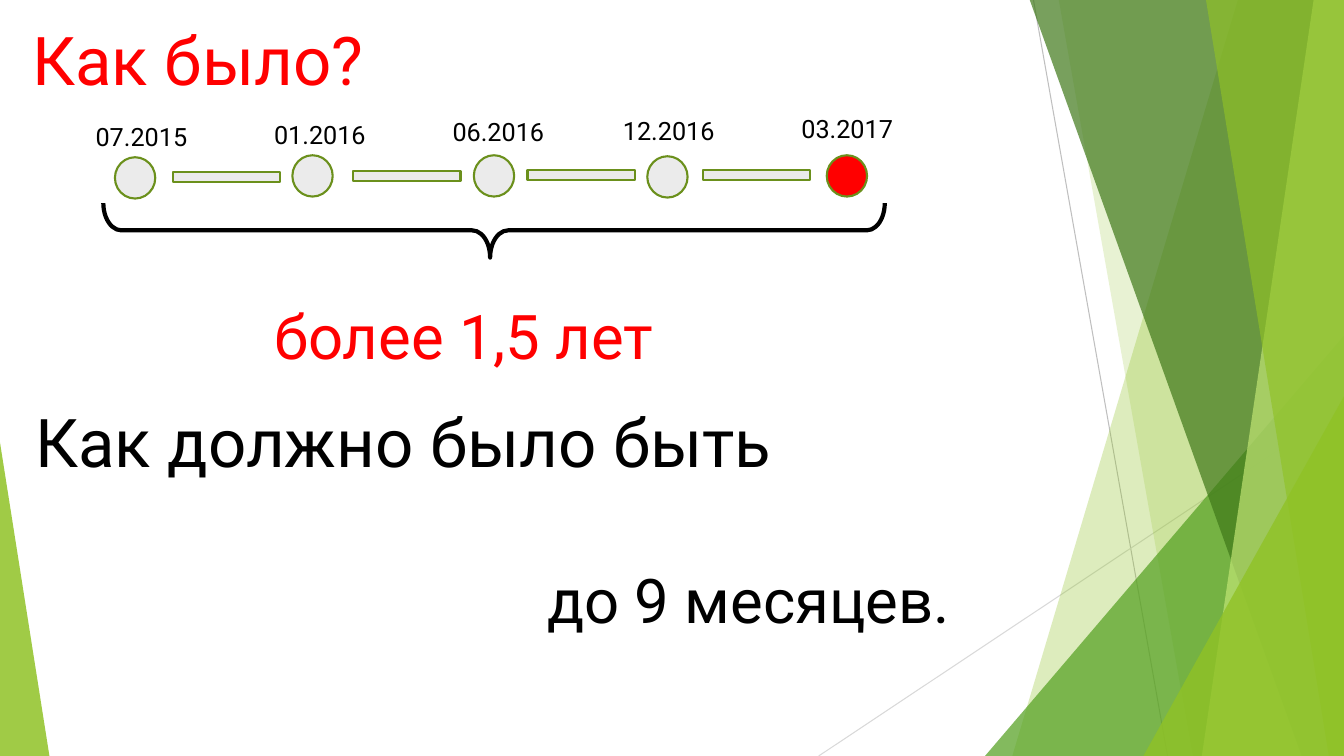
from dataclasses import dataclass
from typing import Optional

from lxml.etree import SubElement
from pptx import Presentation
from pptx.dml.color import RGBColor
from pptx.enum.shapes import MSO_CONNECTOR, MSO_SHAPE
from pptx.enum.text import MSO_ANCHOR, MSO_AUTO_SIZE, PP_ALIGN
from pptx.oxml.ns import qn
from pptx.util import Inches, Pt

WIDTH, HEIGHT = 13.33, 7.5
FACET_TOP = -0.01

BLACK = RGBColor(0x00, 0x00, 0x00)
RED = RGBColor(0xFF, 0x00, 0x00)
PALE = RGBColor(0xEB, 0xEB, 0xEB)
OLIVE = RGBColor(0x6B, 0x90, 0x1C)
LIME = RGBColor(0x90, 0xC2, 0x26)
LIGHT_LIME = RGBColor(0xC0, 0xE4, 0x74)
GREEN = RGBColor(0x54, 0xA0, 0x21)
DARK_GREEN = RGBColor(0x3F, 0x78, 0x19)
GREY = RGBColor(0xBF, 0xBF, 0xBF)
LIGHT_GREY = RGBColor(0xD9, 0xD9, 0xD9)


@dataclass
class Ray:
    start: tuple[float, float]
    end: tuple[float, float]
    color: RGBColor


@dataclass
class Facet:
    """A band from its slanted left edge to the right side of the slide."""
    top_left: float
    bottom_left: float
    color: RGBColor
    opacity: int


@dataclass
class Corner:
    """A right triangle standing on the bottom of the slide."""
    left: float
    top: float
    width: float
    apex: float
    color: RGBColor
    opacity: int


@dataclass
class Milestone:
    date: str
    label: tuple[float, float]
    dot: tuple[float, float]
    bar: Optional[tuple[float, float]] = None
    color: RGBColor = PALE


@dataclass
class Caption:
    text: str
    box: tuple[float, float, float, float]
    size: int
    color: RGBColor = BLACK
    grows: bool = True


RAYS = [
    Ray((10.25, 0), (11.58, HEIGHT), GREY),
    Ray((WIDTH, 4.03), (8.12, HEIGHT), LIGHT_GREY),
]
BACKDROP = [
    Facet(12.28, 10.04, LIME, 30),
    Facet(10.5, 11.83, LIME, 20),
    Corner(9.77, 3.33, 3.56, 1, GREEN, 72),
    Facet(10.21, 12.91, DARK_GREEN, 70),
    Facet(13.03, 11.92, LIGHT_LIME, 70),
    Facet(11.96, 13.18, LIME, 65),
    Corner(11.34, 3.93, 1.99, 1, LIME, 80),
    Corner(0, 4.39, 0.49, 0, LIME, 85),
]
MILESTONES = [
    Milestone("07.2015", (0.85, 1.15), (1.14, 1.56), (1.52, 1.55)),
    Milestone("01.2016", (2.62, 1.13), (2.9, 1.54), (3.31, 1.54)),
    Milestone("06.2016", (4.39, 1.1), (4.7, 1.54), (5.04, 1.53)),
    Milestone("12.2016", (6.08, 1.09), (6.42, 1.55), (6.78, 1.53)),
    Milestone("03.2017", (7.85, 1.08), (8.2, 1.54), color=RED),
]
TITLE = Caption("Как было?", (0.22, 0.13, 9.75, 1.44), 48, RED, False)
CAPTIONS = [
    Caption("более 1,5 лет", (2.62, 2.91, 4.63, 0.84), 44, RED),
    Caption("Как должно было быть", (0.25, 3.92, 9.75, 1.44), 48, grows=False),
    Caption("до 9 месяцев.", (5.33, 5.53, 4.64, 0.84), 44),
]


def set_all(target, values: dict) -> None:
    for name, value in values.items():
        setattr(target, name, value)


def draw_ray(page, ray: Ray) -> None:
    points = [Inches(value) for value in (*ray.start, *ray.end)]
    line = page.shapes.add_connector(MSO_CONNECTOR.STRAIGHT, *points)
    line.line.color.rgb = ray.color
    line.line.width = Pt(0.75)
    SubElement(line.element.spPr, qn("a:effectLst"))


def paint(shape, color: RGBColor, opacity: int) -> None:
    """Give a backdrop shape a translucent fill and no outline."""
    shape.shadow.inherit = False
    shape.fill.solid()
    shape.fill.fore_color.rgb = color
    shape.line.fill.background()
    tint = shape.element.spPr.find(".//" + qn("a:srgbClr"))
    SubElement(tint, qn("a:alpha"), val=str(opacity * 1000))


def draw_facet(page, facet: Facet) -> None:
    start, *others = [
        (Inches(x), Inches(y)) for x, y in (
            (facet.top_left, FACET_TOP), (WIDTH, FACET_TOP),
            (WIDTH, HEIGHT), (facet.bottom_left, HEIGHT))
    ]
    builder = page.shapes.build_freeform(*start)
    builder.add_line_segments(others, close=True)
    paint(builder.convert_to_shape(), facet.color, facet.opacity)


def draw_corner(page, corner: Corner) -> None:
    box = (corner.left, corner.top, corner.width, HEIGHT - corner.top)
    triangle = page.shapes.add_shape(MSO_SHAPE.ISOSCELES_TRIANGLE, *map(Inches, box))
    triangle.adjustments[0] = corner.apex
    paint(triangle, corner.color, corner.opacity)


def draw_marker(page, kind: MSO_SHAPE, place: tuple[float, float],
                size: tuple[float, float], color: RGBColor) -> None:
    marker = page.shapes.add_shape(kind, *map(Inches, (*place, *size)))
    marker.shadow.inherit = False
    marker.fill.solid()
    marker.fill.fore_color.rgb = color
    marker.line.color.rgb = OLIVE
    marker.line.width = Pt(1.5)


def write(shape, caption: Caption) -> None:
    left, top, width, height = map(Inches, caption.box)
    set_all(shape, {"left": left, "top": top, "width": width, "height": height})
    fit = MSO_AUTO_SIZE.SHAPE_TO_FIT_TEXT if caption.grows else MSO_AUTO_SIZE.NONE
    set_all(shape.text_frame, {
        "word_wrap": True, "auto_size": fit, "vertical_anchor": MSO_ANCHOR.TOP})
    para = shape.text_frame.paragraphs[0]
    para.alignment = PP_ALIGN.LEFT
    span = para.add_run()
    span.text = caption.text
    set_all(span.font, {"name": "Roboto", "size": Pt(caption.size)})
    span.font.color.rgb = caption.color


def add_caption(page, caption: Caption) -> None:
    write(page.shapes.add_textbox(*map(Inches, caption.box)), caption)


def draw_milestone(page, stone: Milestone) -> None:
    draw_marker(page, MSO_SHAPE.FLOWCHART_CONNECTOR, stone.dot, (0.4, 0.41), stone.color)
    add_caption(page, Caption(stone.date, (*stone.label, 1.14, 0.4), 18))
    if stone.bar:
        draw_marker(page, MSO_SHAPE.MATH_MINUS, stone.bar, (1.45, 0.42), PALE)


def draw_brace(page) -> None:
    box = map(Inches, (4.63, -1.59, 0.54, 7.75))
    brace = page.shapes.add_shape(MSO_SHAPE.LEFT_BRACE, *box)
    brace.rotation = 270
    brace.adjustments[0], brace.adjustments[1] = 0.33, 0.495
    brace.shadow.inherit = False
    brace.fill.background()
    brace.line.color.rgb = BLACK
    brace.line.width = Pt(3)


def main() -> None:
    deck = Presentation()
    set_all(deck, {"slide_width": Inches(WIDTH), "slide_height": Inches(HEIGHT)})
    page = deck.slides.add_slide(deck.slide_layouts[5])
    for ray in RAYS:
        draw_ray(page, ray)
    for part in BACKDROP:
        draw = draw_facet if isinstance(part, Facet) else draw_corner
        draw(page, part)
    for stone in MILESTONES:
        draw_milestone(page, stone)
    draw_brace(page)
    write(page.shapes.title, TITLE)
    for caption in CAPTIONS:
        add_caption(page, caption)
    deck.save("out.pptx")


if __name__ == "__main__":
    main()
